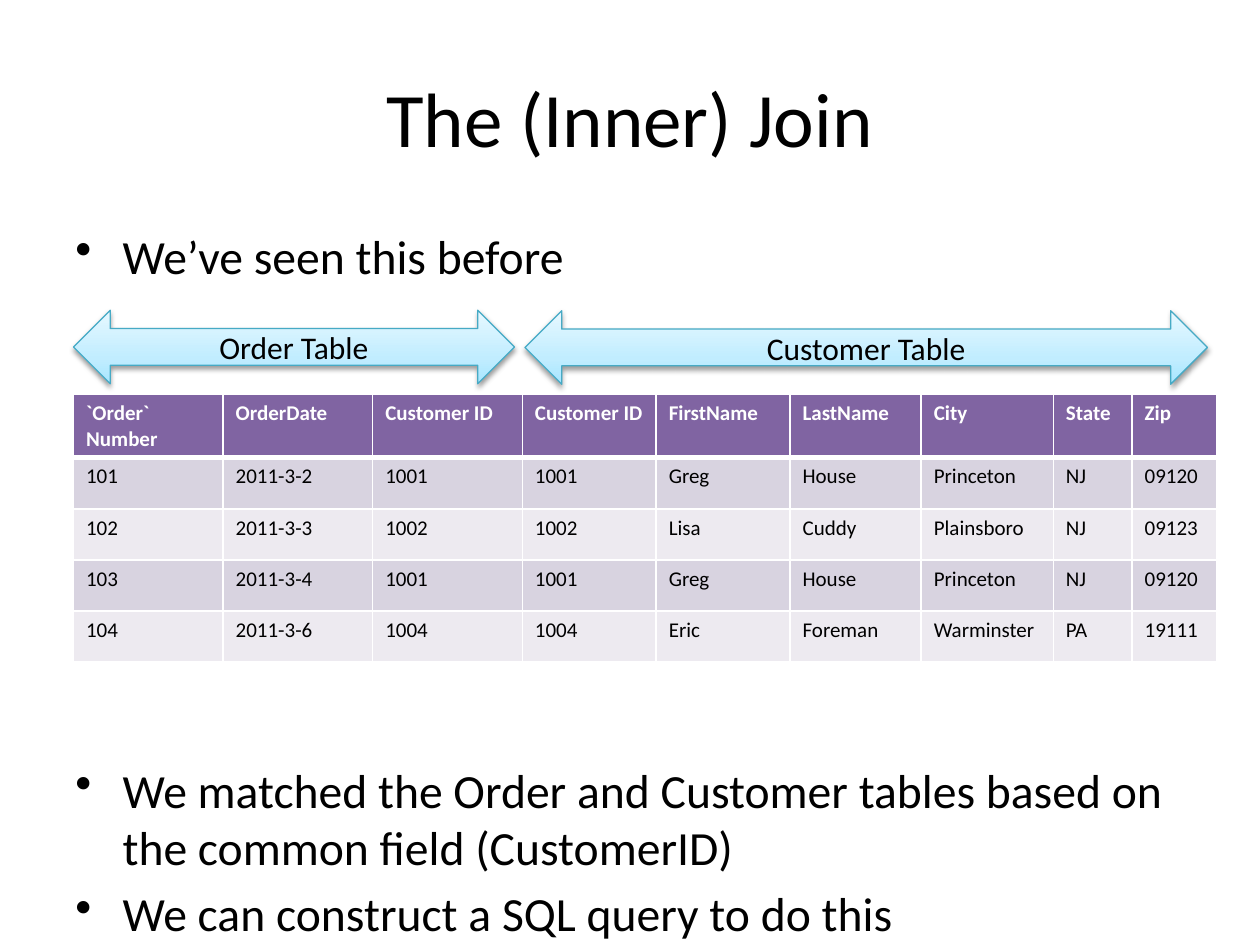
"""Build a slide that shows an inner join of an order and a customer table."""
from dataclasses import dataclass

from lxml import etree
from pptx import Presentation
from pptx.dml.color import RGBColor
from pptx.enum import shapes, text
from pptx.oxml import parse_xml
from pptx.oxml.ns import nsdecls, qn
from pptx.util import Pt


@dataclass(frozen=True)
class Theme:
    font: str = "Calibri"
    ink: str = "000000"
    white: str = "FFFFFF"
    head: str = "8064A2"
    bands: tuple = ("D8D3E0", "EDEAF0")
    edge: str = "46AAC5"
    stops: tuple = ((0, "A7E6FF"), (35, "C1EDFF"), (100, "E7F8FF"))
    title: float = 44
    body: float = 27.2
    label: float = 18
    cell: float = 12


THEME = Theme()
WIDTHS = (85.5, 85.5, 85.5, 76.5, 76.5, 75, 75.5, 45, 48.5)
ROWS = (
    ("`Order` Number", "OrderDate", "Customer ID", "Customer ID",
     "FirstName", "LastName", "City", "State", "Zip"),
    ("101", "2011-3-2", "1001", "1001", "Greg", "House", "Princeton", "NJ", "09120"),
    ("102", "2011-3-3", "1002", "1002", "Lisa", "Cuddy", "Plainsboro", "NJ", "09123"),
    ("103", "2011-3-4", "1001", "1001", "Greg", "House", "Princeton", "NJ", "09120"),
    ("104", "2011-3-6", "1004", "1004", "Eric", "Foreman", "Warminster", "PA", "19111"),
)


def apply(item, form):
    for key, value in form.items():
        setattr(item, key, value)


def style(para, size, color=THEME.ink, bold=False):
    apply(para.font, {"name": THEME.font, "size": Pt(size), "bold": bold})
    para.font.color.rgb = RGBColor.from_string(color)


def add_text(slide, box, lines, size, **form):
    frame = slide.shapes.add_textbox(*map(Pt, box)).text_frame
    apply(frame, {"word_wrap": True, **form})
    frame.text = "\n".join(lines)
    for para in frame.paragraphs:
        style(para, size)
    return frame


def add_title(slide, box, line):
    frame = add_text(slide, box, [line], THEME.title,
                     vertical_anchor=text.MSO_ANCHOR.MIDDLE)
    frame.paragraphs[0].alignment = text.PP_ALIGN.CENTER


def add_list(slide, box, lines):
    frame = add_text(slide, box, lines, THEME.body)
    for para in frame.paragraphs:
        para.space_before = Pt(THEME.body * 0.2)
        props = para._p.get_or_add_pPr()
        props.set("marL", str(Pt(27)))
        props.set("indent", str(-Pt(27)))
        mark = parse_xml(f'<a:buChar {nsdecls("a")} char="•"/>')
        props.insert_element_before(mark, "a:tabLst", "a:defRPr", "a:extLst")


def add_arrow(slide, box, label):
    arrow = slide.shapes.add_shape(shapes.MSO_SHAPE.LEFT_RIGHT_ARROW, *map(Pt, box))
    arrow.fill.solid()
    arrow.line.color.rgb = RGBColor.from_string(THEME.edge)
    arrow.line.width = Pt(0.75)
    arrow.shadow.inherit = False
    props = arrow._element.spPr
    stops = "".join(f'<a:gs pos="{pos * 1000}"><a:srgbClr val="{color}"/></a:gs>'
                    for pos, color in THEME.stops)
    props.replace(props.find(qn("a:solidFill")), parse_xml(
        f'<a:gradFill {nsdecls("a")} rotWithShape="1"><a:gsLst>{stops}</a:gsLst>'
        '<a:lin ang="16200000" scaled="0"/></a:gradFill>'))
    props.find(qn("a:effectLst")).append(parse_xml(
        f'<a:outerShdw {nsdecls("a")} blurRad="{Pt(3.1)}" dist="{Pt(1.6)}" '
        f'dir="5400000" rotWithShape="0"><a:srgbClr val="{THEME.ink}">'
        '<a:alpha val="38000"/></a:srgbClr></a:outerShdw>'))
    frame = arrow.text_frame
    apply(frame, {"text": label, "vertical_anchor": text.MSO_ANCHOR.MIDDLE})
    frame.paragraphs[0].alignment = text.PP_ALIGN.CENTER
    style(frame.paragraphs[0], THEME.label)


def add_edges(cell, sides):
    props = cell._tc.get_or_add_tcPr()
    for spot, (side, width) in enumerate(sides.items()):
        edge = etree.Element(qn(f"a:ln{side}"), w=str(Pt(width)))
        fill = etree.SubElement(edge, qn("a:solidFill"))
        etree.SubElement(fill, qn("a:srgbClr"), val=THEME.white)
        props.insert(spot, edge)


def add_grid(slide, left, top, high):
    grid = slide.shapes.add_table(len(ROWS), len(WIDTHS), Pt(left), Pt(top),
                                  Pt(sum(WIDTHS)), Pt(high * len(ROWS))).table
    for col, width in zip(grid.columns, WIDTHS):
        col.width = Pt(width)
    for row, words in enumerate(ROWS):
        grid.rows[row].height = Pt(high)
        first = row == 0
        color = THEME.head if first else THEME.bands[(row - 1) % 2]
        sides = {"L": 1, "R": 1, "T": 3 if row == 1 else 1, "B": 3 if first else 1}
        for col, word in enumerate(words):
            cell = grid.cell(row, col)
            cell.text = word
            cell.fill.solid()
            cell.fill.fore_color.rgb = RGBColor.from_string(color)
            style(cell.text_frame.paragraphs[0], THEME.cell,
                  THEME.white if first else THEME.ink, first)
            add_edges(cell, sides)


def main():
    deck = Presentation()
    apply(deck, {"slide_width": Pt(720), "slide_height": Pt(540)})
    slide = deck.slides.add_slide(deck.slide_layouts[6])
    add_title(slide, (36, 21.6, 648, 90), "The (Inner) Join")
    add_list(slide, (36, 126, 648, 42), ["We’ve seen this before"])
    add_list(slide, (36, 431, 648, 109), [
        "We matched the Order and Customer tables based on "
        "the common field (CustomerID)",
        "We can construct a SQL query to do this"])
    add_grid(slide, 42, 225.5, 29.2)
    add_arrow(slide, (42, 177.3, 252, 42), "Order Table")
    add_arrow(slide, (300, 177.6, 390, 42), "Customer Table")
    deck.save("out.pptx")


if __name__ == "__main__":
    main()
